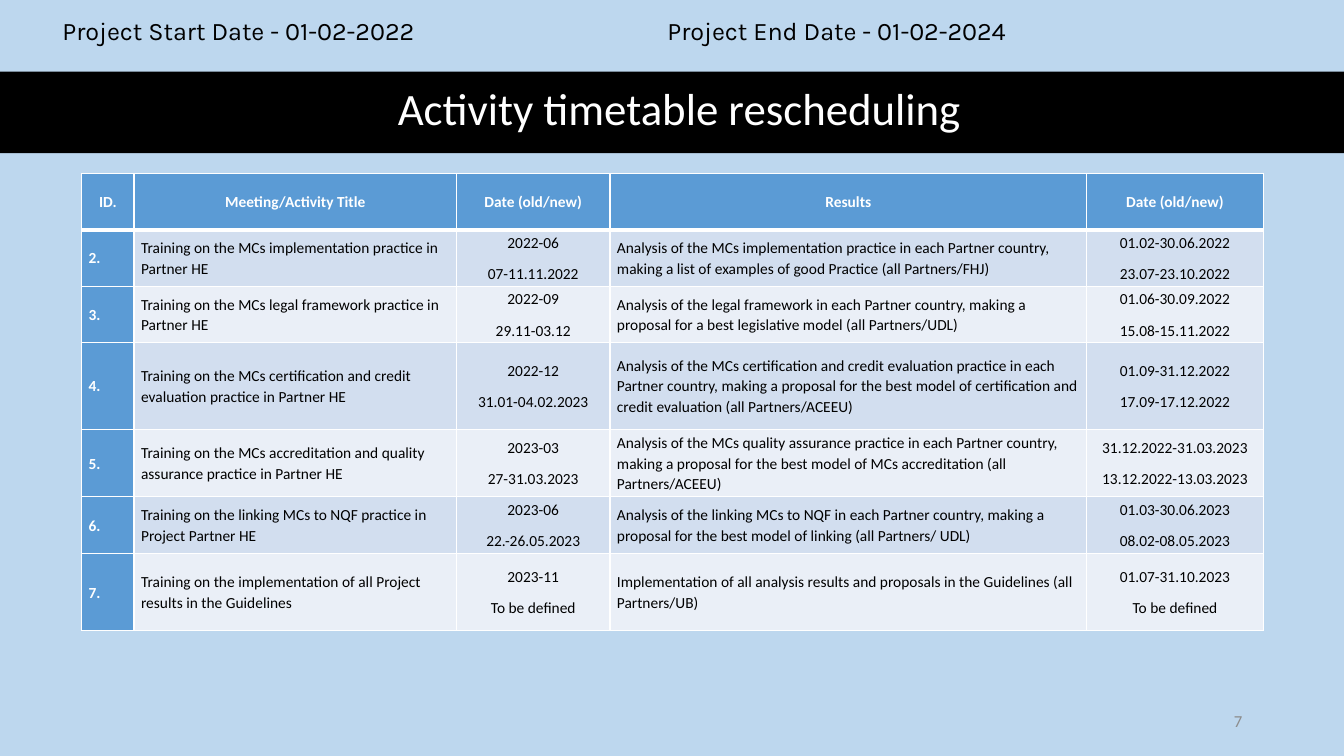
from lxml import etree
from pptx import Presentation
from pptx.dml.color import RGBColor
from pptx.enum import shapes, text
from pptx.oxml import ns
from pptx.util import Inches, Pt

WHITE = RGBColor(0xFF, 0xFF, 0xFF)
BLACK = RGBColor(0, 0, 0)
GREY = RGBColor(0x8C, 0x8C, 0x8C)
SKY = RGBColor(0xBD, 0xD7, 0xEE)
BLUE = RGBColor(0x5B, 0x9B, 0xD5)
BANDS = [RGBColor(0xD2, 0xDE, 0xEF), RGBColor(0xEA, 0xEF, 0xF7)]
LEFT, CENTER, RIGHT = text.PP_ALIGN.LEFT, text.PP_ALIGN.CENTER, text.PP_ALIGN.RIGHT

HEADINGS = ["ID.", "Meeting/Activity Title", "Date (old/new)", "Results", "Date (old/new)"]
ACTIVITIES = [
    ["2.", "Training on the MCs implementation practice in Partner HE",
     "2022-06\n07-11.11.2022",
     "Analysis of the MCs implementation practice in each Partner country, "
     "making a list of examples of good Practice (all Partners/FHJ)",
     "01.02-30.06.2022\n23.07-23.10.2022"],
    ["3.", "Training on the MCs legal framework practice in Partner HE",
     "2022-09\n29.11-03.12",
     "Analysis of the legal framework in each Partner country, making a "
     "proposal for a best legislative model (all Partners/UDL)",
     "01.06-30.09.2022\n15.08-15.11.2022"],
    ["4.", "Training on the MCs certification and credit evaluation practice in Partner HE",
     "2022-12\n31.01-04.02.2023",
     "Analysis of the MCs certification and credit evaluation practice in each "
     "Partner country, making a proposal for the best model of certification and "
     "credit evaluation (all Partners/ACEEU)",
     "01.09-31.12.2022\n17.09-17.12.2022"],
    ["5.", "Training on the MCs accreditation and quality assurance practice in Partner HE",
     "2023-03\n27-31.03.2023",
     "Analysis of the MCs quality assurance practice in each Partner country, "
     "making a proposal for the best model of MCs accreditation (all Partners/ACEEU)",
     "31.12.2022-31.03.2023\n13.12.2022-13.03.2023"],
    ["6.", "Training on the linking MCs to NQF practice in Project Partner HE",
     "2023-06\n22.-26.05.2023",
     "Analysis of the linking MCs to NQF in each Partner country, making a "
     "proposal for the best model of linking (all Partners/ UDL)",
     "01.03-30.06.2023\n08.02-08.05.2023"],
    ["7.", "Training on the implementation of all Project results in the Guidelines",
     "2023-11\nTo be defined",
     "Implementation of all analysis results and proposals in the Guidelines "
     "(all Partners/UB)",
     "01.07-31.10.2023\nTo be defined"],
]
COLUMN_WIDTHS = [0.52, 3.2, 1.52, 4.73, 1.75]
ROW_HEIGHTS = [0.56, 0.56, 0.56, 0.86, 0.67, 0.56, 0.77]


def write(frame, content, color, layout, **font):
    frame.text = content
    for paragraph in frame.paragraphs:
        for name, value in layout.items():
            setattr(paragraph, name, value)
        for span in paragraph.runs:
            span.font.color.rgb = color
            for name, value in font.items():
                setattr(span.font, name, value)


def add_text(place, content, color, layout, anchor, **font):
    box = page.shapes.add_textbox(*map(Inches, place))
    box.text_frame.word_wrap = True
    box.text_frame.vertical_anchor = anchor
    write(box.text_frame, content, color, layout, **font)
    return box


deck = Presentation()
deck.slide_width, deck.slide_height = Inches(13.33), Inches(7.5)
page = deck.slides.add_slide(deck.slide_layouts[6])
page.background.fill.solid()
page.background.fill.fore_color.rgb = SKY

# Title on its black band
band = page.shapes.add_shape(shapes.MSO_SHAPE.RECTANGLE, 0, Inches(0.71),
                             deck.slide_width, Inches(0.81))
band.shadow.inherit = False
band.fill.solid()
band.fill.fore_color.rgb = BLACK
band.line.fill.background()
MIDDLE, TOP = text.MSO_ANCHOR.MIDDLE, text.MSO_ANCHOR.TOP
add_text((0.61, 0.7, 12.26, 0.81), "Activity timetable rescheduling", WHITE,
         {"alignment": CENTER, "line_spacing": 0.9}, MIDDLE, name="Calibri", size=Pt(32))

# Page number
add_text((9.42, 6.95, 3, 0.4), "7", GREY, {"alignment": RIGHT, "space_after": Pt(6)},
         MIDDLE, name="Calibri", size=Pt(12))

# Timetable
frame = page.shapes.add_table(len(ROW_HEIGHTS), len(COLUMN_WIDTHS), Inches(0.81),
                              Inches(1.72), Inches(11.72), Inches(4.53))
timetable = frame.table
for column, width in zip(timetable.columns, COLUMN_WIDTHS):
    column.width = Inches(width)
for row, height in zip(timetable.rows, ROW_HEIGHTS):
    row.height = Inches(height)

for r, entries in enumerate([HEADINGS] + ACTIVITIES):
    for c, entry in enumerate(entries):
        cell = timetable.cell(r, c)
        heading = r == 0 or c == 0
        cell.margin_left = cell.margin_right = Inches(0.07)
        cell.margin_top = cell.margin_bottom = 0
        cell.vertical_anchor = MIDDLE
        # Borders: a thick rule divides the heading row from the rest
        thick = {0: "lnB", 1: "lnT"}.get(r)
        for side in ("lnL", "lnR", "lnT", "lnB"):
            edge = etree.SubElement(cell._tc.get_or_add_tcPr(), ns.qn(f"a:{side}"),
                                    w=str(Pt(3 if side == thick else 1)))
            paint = etree.SubElement(edge, ns.qn("a:solidFill"))
            etree.SubElement(paint, ns.qn("a:srgbClr"), val=str(WHITE))
        cell.fill.solid()
        cell.fill.fore_color.rgb = BLUE if heading else BANDS[(r - 1) % 2]
        write(cell.text_frame, entry, WHITE if heading else BLACK,
              {"alignment": CENTER if r == 0 or c in (2, 4) else LEFT,
               "line_spacing": 1.07, "space_after": Pt(8)},
              name="Calibri", size=Pt(11), bold=heading)

# Project dates, the second one at a tab stop
dates = add_text((0.52, 0.1, 12.12, 0.4),
                 "Project Start Date - 01-02-2022\tProject End Date - 01-02-2024",
                 BLACK, {"alignment": LEFT}, TOP, name="Karla", size=Pt(18))
properties = dates.text_frame.paragraphs[0]._p.get_or_add_pPr()
stops = etree.SubElement(properties, ns.qn("a:tabLst"))
etree.SubElement(stops, ns.qn("a:tab"), pos=str(Inches(6)), algn="l")

deck.save("out.pptx")
